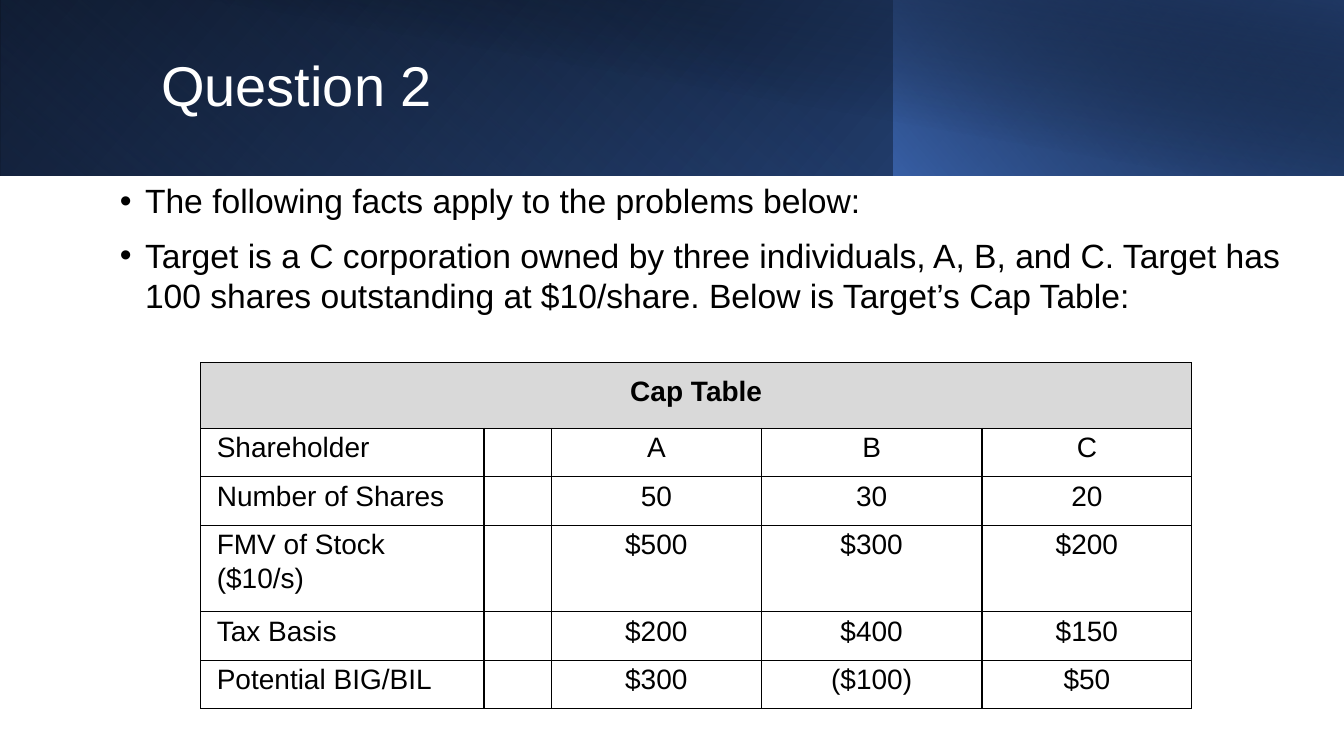
from dataclasses import dataclass

from pptx import Presentation
from pptx import util as u
from pptx.dml.color import RGBColor
from pptx.enum import shapes, text
from pptx.oxml import parse_xml
from pptx.oxml.ns import nsdecls, qn

W, H = u.Inches(13.33), u.Inches(7.5)


@dataclass(frozen=True)
class Theme:
    font: str = "Arial"
    ink: str = "000000"
    light: str = "FFFFFF"
    head_fill: str = "D9D9D9"
    accent: str = "4472C4"
    mid: str = "2F5597"
    deep: str = "203864"
    title: int = 40
    body: int = 24
    table: int = 20


T = Theme()

BULLETS = [
    "The following facts apply to the problems below:",
    "Target is a C corporation owned by three individuals, A, B, and C. Target has "
    "100 shares outstanding at $10/share. Below is Target’s Cap Table:",
]
CAP_TITLE = "Cap Table"
CAP_ROWS = [
    ["Shareholder", "", "A", "B", "C"],
    ["Number of Shares", "", "50", "30", "20"],
    ["FMV of Stock ($10/s)", "", "$500", "$300", "$200"],
    ["Tax Basis", "", "$200", "$400", "$150"],
    ["Potential BIG/BIL", "", "$300", "($100)", "$50"],
]
COL_WEIGHTS = [2.81, 0.67, 2.08, 2.19, 2.08]
ROW_WEIGHTS = [0.65, 0.48, 0.48, 0.86, 0.48, 0.48]


def grid(x, y, w, h):
    """Box in percent of the slide's width and height."""
    return int(W * x / 100), int(H * y / 100), int(W * w / 100), int(H * h / 100)


def within(box, x, y, w, h):
    """Part of a box, given in shares of it."""
    left, top, width, height = box
    return (int(left + width * x), int(top + height * y),
            int(width * w), int(height * h))


def style(p, size, color, bold=False):
    for r in p.runs:
        r.font.name, r.font.size, r.font.bold = T.font, u.Pt(size), bold
        r.font.color.rgb = RGBColor.from_string(color)


def gradient_rect(s, box, stops, angle, flip=True, rotation=0):
    """Rectangle whose stops are (position %, colour, opacity %)."""
    sp = s.shapes.add_shape(shapes.MSO_SHAPE.RECTANGLE, *box)
    sp.shadow.inherit = False
    sp.line.fill.background()
    sp.fill.background()
    sp.rotation = rotation
    spPr = sp._element.spPr
    if flip:
        spPr.find(qn("a:xfrm")).set("flipH", "1")
    marks = "".join(
        f'<a:gs pos="{pos * 1000}"><a:srgbClr val="{color}">'
        f'<a:alpha val="{alpha * 1000}"/></a:srgbClr></a:gs>'
        for pos, color, alpha in stops)
    fill = parse_xml(
        f'<a:gradFill {nsdecls("a")} rotWithShape="1"><a:gsLst>{marks}</a:gsLst>'
        f'<a:lin ang="{angle * 60000}" scaled="0"/></a:gradFill>')
    spPr.replace(spPr.find(qn("a:noFill")), fill)


def banner(s, box, title):
    gradient_rect(s, box, [(0, T.ink, 100), (100, T.mid, 100)], 140)
    gradient_rect(s, within(box, 0, 0, 0.67, 1),
                  [(20, T.accent, 0), (100, T.deep, 55)], 230, rotation=180)
    gradient_rect(s, within(box, 0.665, 0, 0.335, 1),
                  [(0, T.accent, 66), (100, T.ink, 30)], 220)
    gradient_rect(s, within(box, 0.0375, 0, 0.9625, 1),
                  [(50, T.ink, 0), (99, T.deep, 52)], 280, flip=False)
    tf = s.shapes.add_textbox(*within(box, 0.1125, 0.18, 0.81, 0.65)).text_frame
    tf.word_wrap = True
    tf.vertical_anchor = text.MSO_ANCHOR.MIDDLE
    p = tf.paragraphs[0]
    p.text, p.line_spacing = title, 0.9
    style(p, T.title, T.light)


def bullet_list(s, box, items):
    tf = s.shapes.add_textbox(*box).text_frame
    tf.word_wrap = True
    tf.text = "\n".join(items)
    for p in tf.paragraphs:
        p.space_before = u.Pt(10)
        style(p, T.body, T.ink)
        pPr = p._p.get_or_add_pPr()
        pPr.set("marL", str(u.Inches(0.25)))
        pPr.set("indent", str(-u.Inches(0.25)))
        pPr.append(parse_xml(f'<a:buFont {nsdecls("a")} typeface="{T.font}"/>'))
        pPr.append(parse_xml(f'<a:buChar {nsdecls("a")} char="•"/>'))


def set_cell(cell, value, margins, centred, bold=False, fill=None):
    side, top, bottom = (u.Inches(m) for m in margins)
    cell.margin_left = cell.margin_right = side
    cell.margin_top, cell.margin_bottom = top, bottom
    if fill:
        cell.fill.solid()
        cell.fill.fore_color.rgb = RGBColor.from_string(fill)
    else:
        cell.fill.background()
    tcPr = cell._tc.get_or_add_tcPr()
    for i, edge in enumerate(("lnL", "lnR", "lnT", "lnB")):
        tcPr.insert(i, parse_xml(
            f'<a:{edge} {nsdecls("a")} w="{u.Pt(1)}"><a:solidFill>'
            f'<a:srgbClr val="{T.ink}"/></a:solidFill></a:{edge}>'))
    p = cell.text_frame.paragraphs[0]
    p.text, p.line_spacing = value, 1.07
    p.alignment = text.PP_ALIGN.CENTER if centred else text.PP_ALIGN.LEFT
    style(p, T.table, T.ink, bold)


def cap_table(s, box, title, rows):
    n_cols = len(COL_WEIGHTS)
    tbl = s.shapes.add_table(len(rows) + 1, n_cols, *box).table
    tbl.first_row = tbl.horz_banding = False
    for col, weight in zip(tbl.columns, COL_WEIGHTS):
        col.width = int(box[2] * weight / sum(COL_WEIGHTS))
    for row, weight in zip(tbl.rows, ROW_WEIGHTS):
        row.height = int(box[3] * weight / sum(ROW_WEIGHTS))
    for c in range(n_cols):
        set_cell(tbl.cell(0, c), "" if c else title, (0.22, 0.11, 0.11), True,
                 bold=True, fill=T.head_fill)
    tbl.cell(0, 0).merge(tbl.cell(0, n_cols - 1))
    for r, values in enumerate(rows, 1):
        for c, value in enumerate(values):
            set_cell(tbl.cell(r, c), value, (0.16, 0.02, 0), c > 0)


def question_slide(prs):
    s = prs.slides.add_slide(prs.slide_layouts[6])
    banner(s, grid(0, 0, 100, 23.2), "Question 2")
    bullet_list(s, grid(8.18, 23.2, 88.05, 30.67), BULLETS)
    cap_table(s, grid(14.93, 48, 73.75, 45.75), CAP_TITLE, CAP_ROWS)


def main():
    prs = Presentation()
    prs.slide_width, prs.slide_height = W, H
    question_slide(prs)
    prs.save("out.pptx")


if __name__ == "__main__":
    main()
